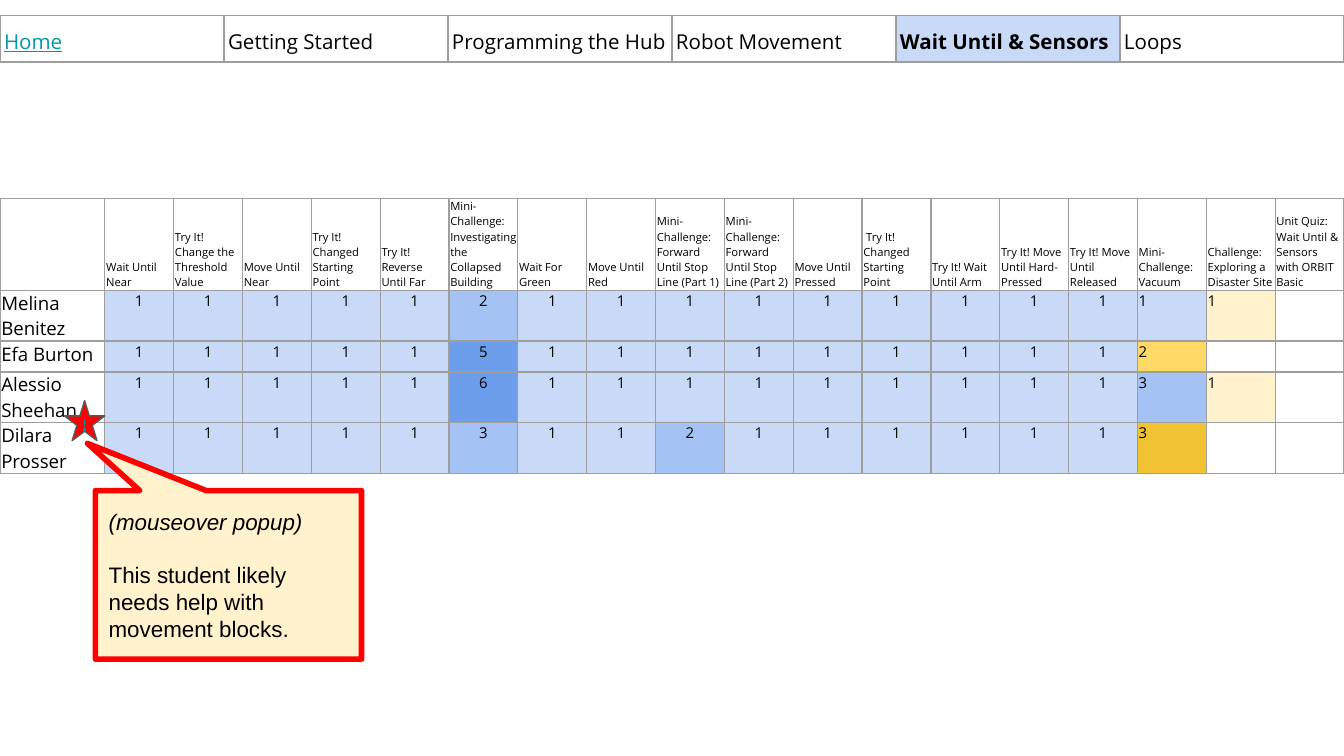
from lxml import etree
from pptx import Presentation
from pptx import util as u
from pptx.dml.color import RGBColor
from pptx.enum import shapes, text
from pptx.oxml.ns import qn

HUES = {
    "ink": "000000", "link": "0097A7", "grid": "9E9E9E", "edge": "595959",
    "red": "FF0000", "light": "C9DAF8", "mid": "A4C2F4", "deep": "6D9EEB",
    "cream": "FFF2CC", "yellow": "FFD966", "gold": "F1C232",
}
TABS = ["Home", "Getting Started", "Programming the Hub", "Robot Movement",
        "Wait Until & Sensors", "Loops"]
TASKS = [
    "Wait Until Near", "Try It! Change the Threshold Value", "Move Until Near",
    "Try It! Changed Starting Point", "Try It! Reverse Until Far",
    "Mini-Challenge: Investigating the Collapsed Building", "Wait For Green",
    "Move Until Red", "Mini-Challenge: Forward Until Stop Line (Part 1)",
    "Mini-Challenge: Forward Until Stop Line (Part 2)", "Move Until Pressed",
    " Try It! Changed Starting Point", "Try It! Wait Until Arm",
    "Try It! Move Until Hard-Pressed", "Try It! Move Until Released",
    "Mini-Challenge: Vacuum", "Challenge: Exploring a Disaster Site",
    "Unit Quiz: Wait Until & Sensors with ORBIT Basic",
]
# One digit per task; a dash is a task not tried yet
TRIES = {
    "Melina Benitez": "11111211111111111-",
    "Efa Burton": "1111151111111112--",
    "Alessio Sheehan": "11111611111111131-",
    "Dilara Prosser": "1111131121111113--",
}
VACUUM, SITE = 16, 17
FLAGS = {("Efa Burton", VACUUM): "yellow", ("Dilara Prosser", VACUUM): "gold"}


def shade(name, col, tries):
    """Colour key for a count: darker blue means more tries."""
    if tries == "-":
        return None
    if col == SITE:
        return "cream"
    blue = "light" if tries == "1" else "mid" if tries in "23" else "deep"
    return FLAGS.get((name, col), blue)


class Deck:
    def __init__(self, wide, ratio):
        self.prs = Presentation()
        self.prs.slide_width = u.Inches(wide)
        self.prs.slide_height = u.Inches(wide * ratio)
        self.slide = self.prs.slides.add_slide(self.prs.slide_layouts[6])

    def hue(self, key):
        return RGBColor.from_string(HUES[key])

    def across(self, share):
        return int(self.prs.slide_width * share)

    def down(self, share):
        return int(self.prs.slide_height * share)

    def style(self, para, size, face="Open Sans", key="ink", **marks):
        font = para.font
        font.size, font.name = u.Pt(size), face
        font.color.rgb = self.hue(key)
        for mark, value in marks.items():
            setattr(font, mark, value)

    def table(self, top, cols, rows):
        """Full-width table; cols are shares of the width, rows of the height."""
        frame = self.slide.shapes.add_table(
            len(rows), len(cols), 0, self.down(top),
            self.across(sum(cols)), self.down(sum(rows)))
        grid = frame.table
        grid.first_row = grid.horz_banding = False
        for col, share in zip(grid.columns, cols):
            col.width = self.across(share)
        for row, share in zip(grid.rows, rows):
            row.height = self.down(share)
        return grid

    def cell(self, cell, words, size, fill=None, pad=(0.01, 0), low=False,
             mid=False, **marks):
        cell.margin_left = cell.margin_right = u.Inches(pad[0])
        cell.margin_top = cell.margin_bottom = u.Inches(pad[1])
        cell.vertical_anchor = text.MSO_ANCHOR.BOTTOM if low else text.MSO_ANCHOR.TOP
        if fill:
            cell.fill.solid()
            cell.fill.fore_color.rgb = self.hue(fill)
        else:
            cell.fill.background()
        self.border(cell)
        cell.text = words
        para = cell.text_frame.paragraphs[0]
        para.alignment = text.PP_ALIGN.CENTER if mid else text.PP_ALIGN.LEFT
        self.style(para, size, **marks)
        if not words:
            end = etree.SubElement(para._p, qn("a:endParaRPr"))
            end.set("sz", str(size * 100))

    def border(self, cell):
        props = cell._tc.get_or_add_tcPr()
        for spot, side in enumerate(("lnL", "lnR", "lnT", "lnB")):
            line = etree.Element(qn("a:" + side), w=str(u.Pt(0.75)))
            solid = etree.SubElement(line, qn("a:solidFill"))
            etree.SubElement(solid, qn("a:srgbClr"), val=HUES["grid"])
            props.insert(spot, line)

    def shape(self, kind, box, fill, edge, weight, pad):
        """Filled shape; box holds left, top, width and height as shares."""
        left, top, wide, high = box
        item = self.slide.shapes.add_shape(
            kind, self.across(left), self.down(top), self.across(wide), self.down(high))
        item.shadow.inherit = False
        item.fill.solid()
        item.fill.fore_color.rgb = self.hue(fill)
        item.line.color.rgb = self.hue(edge)
        item.line.width = u.Pt(weight)
        frame = item.text_frame
        frame.word_wrap = True
        frame.margin_left = frame.margin_right = u.Inches(pad)
        frame.margin_top = frame.margin_bottom = u.Inches(pad)
        return item


def scores(deck):
    first = 0.078
    cols = [first] + [(1 - first) / len(TASKS)] * len(TASKS)
    grid = deck.table(0.263, cols, [0.101, 0.041, 0.041, 0.041, 0.062])
    for col, task in enumerate([""] + TASKS):
        deck.cell(grid.cell(0, col), task, 6, low=True)
    for row, (name, marks) in enumerate(TRIES.items(), 1):
        deck.cell(grid.cell(row, 0), name, 10)
        for col, tries in enumerate(marks, 1):
            deck.cell(grid.cell(row, col), tries.strip("-"), 8,
                      shade(name, col, tries), mid=col < VACUUM)


def menu(deck):
    grid = deck.table(0.021, [1 / len(TABS)] * len(TABS), [0.061])
    looks = {"Home": {"key": "link", "underline": True},
             "Wait Until & Sensors": {"fill": "light", "bold": True}}
    for col, tab in enumerate(TABS):
        deck.cell(grid.cell(0, col), tab, 11, pad=(0.03, 0.05), low=True,
                  **looks.get(tab, {}))


def alert(deck):
    star = deck.shape(shapes.MSO_SHAPE.STAR_5_POINT, (0.048, 0.53, 0.03, 0.053),
                      "red", "edge", 0.75, 0)
    star.text_frame.vertical_anchor = text.MSO_ANCHOR.TOP
    para = star.text_frame.paragraphs[0]
    para.text, para.alignment = "!", text.PP_ALIGN.CENTER
    deck.style(para, 7, "Arial Narrow", "link", bold=True, underline=True)

    note = deck.shape(shapes.MSO_SHAPE.RECTANGULAR_CALLOUT,
                      (0.071, 0.649, 0.198, 0.223), "cream", "red", 3, 0.1)
    note.adjustments[0], note.adjustments[1] = -0.53, -0.78
    frame = note.text_frame
    frame.vertical_anchor = text.MSO_ANCHOR.MIDDLE
    frame.text = ("(mouseover popup)\n"
                  "This student likely needs help with movement blocks.")
    for para, slant in zip(frame.paragraphs, (True, False)):
        para.alignment = text.PP_ALIGN.LEFT
        deck.style(para, 12, "Arial", italic=slant)
    frame.paragraphs[1].space_before = u.Pt(14.4)


def main():
    deck = Deck(10, 9 / 16)
    scores(deck)
    menu(deck)
    alert(deck)
    deck.prs.save("out.pptx")


if __name__ == "__main__":
    main()
